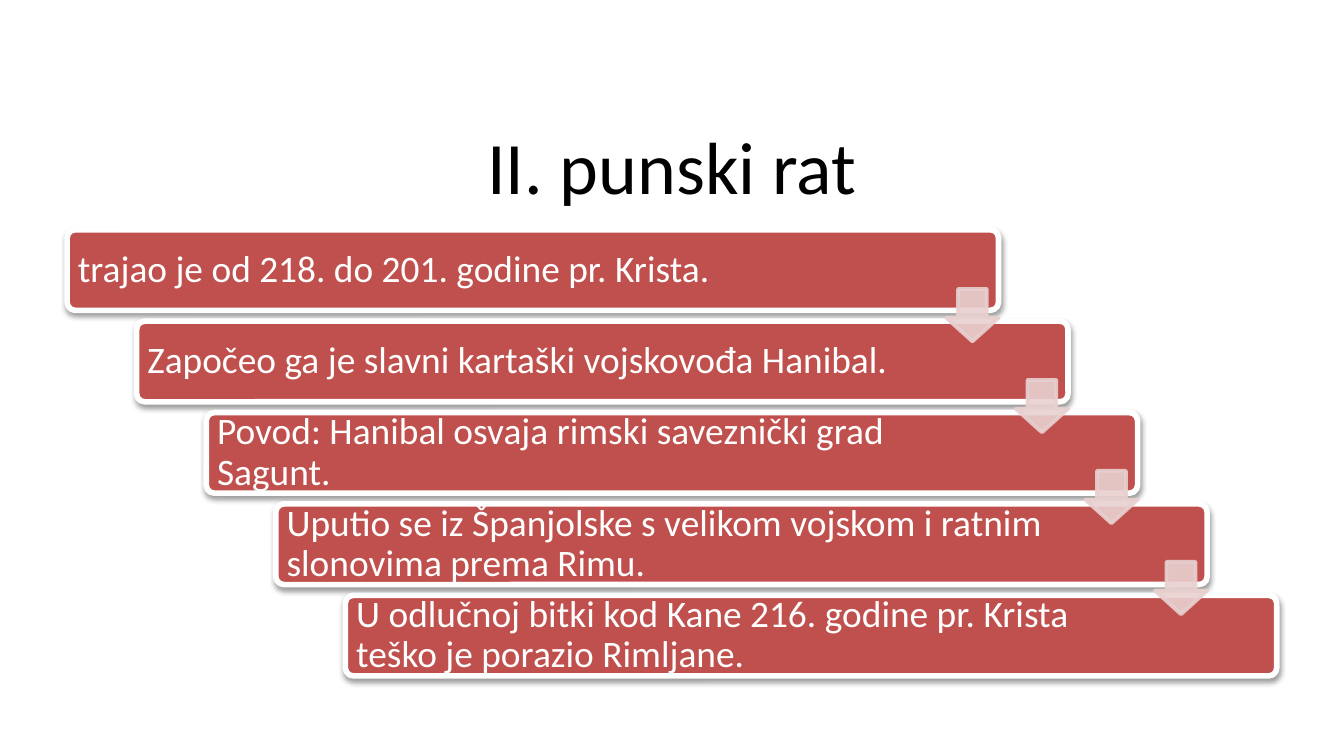
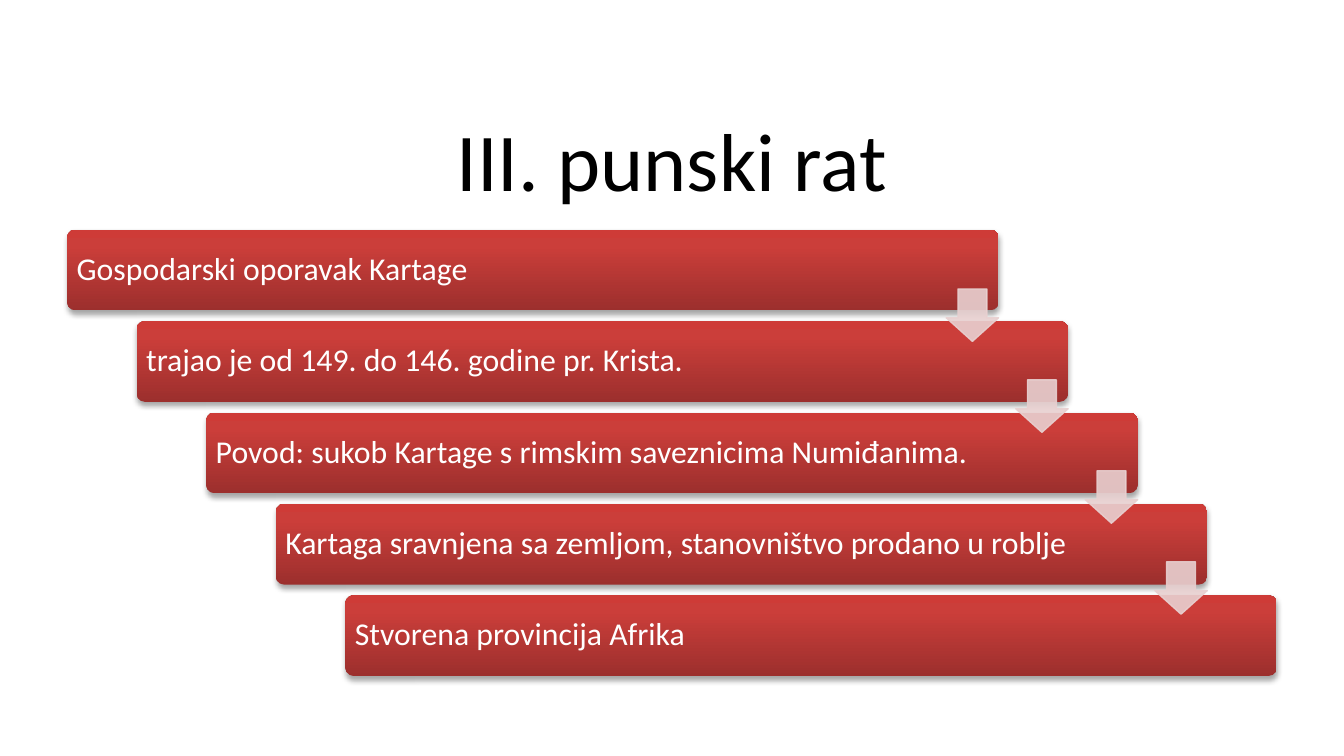
from copy import deepcopy
from dataclasses import dataclass

from lxml import etree
from pptx import Presentation
from pptx import util as u
from pptx.dml.color import RGBColor
from pptx.enum import shapes, text
from pptx.oxml.ns import qn

FONT = "Calibri"
BLACK = RGBColor(0x00, 0x00, 0x00)
WHITE = RGBColor(0xFF, 0xFF, 0xFF)
BRICK = RGBColor(0xC0, 0x50, 0x4D)
PINK = RGBColor(0xE8, 0xD0, 0xD0)
RED_GRADIENT = [
    (0, RGBColor(0x9C, 0x2F, 0x2D)),
    (0.8, RGBColor(0xCB, 0x3E, 0x3A)),
    (1, RGBColor(0xCE, 0x3B, 0x37)),
]

SLIDE_WIDTH = 10
SLIDE_HEIGHT = SLIDE_WIDTH * 9 / 16
MARGIN = SLIDE_WIDTH / 20
TITLE_TOP, TITLE_HEIGHT = 0.84, 0.78
STAIRS_TOP = 1.71
STEP_WIDTH, STEP_HEIGHT = 6.93, 0.6
STEP_COUNT = 5
COLUMN = (SLIDE_WIDTH - 2 * MARGIN - STEP_WIDTH) / (STEP_COUNT - 1)
ROW = 0.68
FIRST_TEXT_WIDTH, TEXT_WIDTH = 6.25, 6.02
ARROW_SIZE = 0.39
ARROW_LEFT = MARGIN + STEP_WIDTH - ARROW_SIZE
FIRST_ARROW_TOP, LAST_ARROW_TOP = 2.15, 4.18
ARROW_ROW = (LAST_ARROW_TOP - FIRST_ARROW_TOP) / (STEP_COUNT - 2)


@dataclass
class StairStyle:
    text_size: float
    inset: float
    arrow_line: float
    shadow_opacity: int
    shadow_distance: float
    gradient: bool


FLAT = StairStyle(20, 0.08, 2, 38, 1.6, False)
GLOSSY = StairStyle(17, 0.07, 0.75, 35, 1.8, True)


def inches(*lengths):
    return [u.Inches(length) for length in lengths]


def set_font(paragraph, size, color):
    paragraph.font.name = FONT
    paragraph.font.size = u.Pt(size)
    paragraph.font.color.rgb = color


def set_opacity(parent, percent):
    for color in parent.iter(qn("a:srgbClr")):
        etree.SubElement(color, qn("a:alpha"), val=str(percent * 1000))


def set_gradient(shape, stops):
    shape.fill.gradient()
    shape.fill.gradient_angle = 90
    stop_list = shape._element.spPr.find(".//" + qn("a:gsLst"))
    stop_list.append(deepcopy(stop_list[-1]))
    for stop, (position, color) in zip(shape.fill.gradient_stops, stops):
        stop.position = position
        stop.color.rgb = color


def set_shadow(shape, style):
    shape.shadow.inherit = False
    effects = shape._element.spPr.find(qn("a:effectLst"))
    shadow = etree.SubElement(
        effects, qn("a:outerShdw"),
        blurRad=str(u.Pt(3.1)), dist=str(u.Pt(style.shadow_distance)),
        dir="5400000", rotWithShape="0")
    etree.SubElement(shadow, qn("a:srgbClr"), val=str(BLACK))
    set_opacity(shadow, style.shadow_opacity)


def add_title(slide, wording, size, line_spacing):
    title = slide.shapes.title
    title.left, title.top, title.width, title.height = inches(
        MARGIN, TITLE_TOP, SLIDE_WIDTH - 2 * MARGIN, TITLE_HEIGHT)
    frame = title.text_frame
    frame.text = wording
    frame.auto_size = text.MSO_AUTO_SIZE.NONE
    frame.vertical_anchor = text.MSO_ANCHOR.MIDDLE
    paragraph = frame.paragraphs[0]
    paragraph.alignment = text.PP_ALIGN.CENTER
    paragraph.line_spacing = line_spacing
    set_font(paragraph, size, BLACK)


def add_step(group, index, wording, style):
    left, top = MARGIN + index * COLUMN, STAIRS_TOP + index * ROW
    bar = group.shapes.add_shape(
        shapes.MSO_SHAPE.ROUNDED_RECTANGLE,
        *inches(left, top, STEP_WIDTH, STEP_HEIGHT))
    bar.adjustments[0] = 0.1
    if style.gradient:
        set_gradient(bar, RED_GRADIENT)
        bar.line.fill.background()
    else:
        bar.fill.solid()
        bar.fill.fore_color.rgb = BRICK
        bar.line.color.rgb = WHITE
        bar.line.width = u.Pt(3)
    set_shadow(bar, style)

    width = TEXT_WIDTH if index else FIRST_TEXT_WIDTH
    label = group.shapes.add_textbox(*inches(left, top, width, STEP_HEIGHT))
    frame = label.text_frame
    frame.text = wording
    frame.word_wrap = True
    frame.vertical_anchor = text.MSO_ANCHOR.MIDDLE
    frame.margin_left = frame.margin_right = u.Inches(style.inset)
    frame.margin_top = frame.margin_bottom = u.Inches(style.inset)
    paragraph = frame.paragraphs[0]
    paragraph.line_spacing = 0.9
    paragraph.space_after = u.Pt(round(0.35 * style.text_size))
    set_font(paragraph, style.text_size, WHITE)


def add_arrow(group, index, style):
    arrow = group.shapes.add_shape(
        shapes.MSO_SHAPE.DOWN_ARROW,
        *inches(ARROW_LEFT + index * COLUMN,
                FIRST_ARROW_TOP + index * ARROW_ROW,
                ARROW_SIZE, ARROW_SIZE))
    arrow.adjustments[0] = 0.55
    arrow.adjustments[1] = 0.45
    arrow.fill.solid()
    arrow.fill.fore_color.rgb = PINK
    arrow.line.color.rgb = PINK
    arrow.line.width = u.Pt(style.arrow_line)
    arrow.shadow.inherit = False
    set_opacity(arrow._element.spPr, 90)


def add_stairs(slide, steps, style):
    group = slide.shapes.add_group_shape()
    for index, wording in enumerate(steps):
        add_step(group, index, wording, style)
    for index in range(len(steps) - 1):
        add_arrow(group, index, style)


def add_war_slide(presentation, title, title_size, line_spacing, steps, style):
    slide = presentation.slides.add_slide(presentation.slide_layouts[5])
    add_title(slide, title, title_size, line_spacing)
    add_stairs(slide, steps, style)


def main():
    presentation = Presentation()
    presentation.slide_width, presentation.slide_height = inches(
        SLIDE_WIDTH, SLIDE_HEIGHT)
    add_war_slide(presentation, "II. punski rat", 39.6, 1.0, [
        "trajao je od 218. do 201. godine pr. Krista.",
        "Započeo ga je slavni kartaški vojskovođa Hanibal.",
        "Povod: Hanibal osvaja rimski saveznički grad Sagunt.",
        "Uputio se iz Španjolske s velikom vojskom i ratnim slonovima prema Rimu.",
        "U odlučnoj bitki kod Kane 216. godine pr. Krista teško je porazio Rimljane.",
    ], FLAT)
    add_war_slide(presentation, "III. punski rat", 44, 0.9, [
        "Gospodarski oporavak Kartage",
        "trajao je od 149. do 146. godine pr. Krista.",
        "Povod: sukob Kartage s rimskim saveznicima Numiđanima.",
        "Kartaga sravnjena sa zemljom, stanovništvo prodano u roblje",
        "Stvorena provincija Afrika",
    ], GLOSSY)
    presentation.save("out.pptx")


if __name__ == "__main__":
    main()
